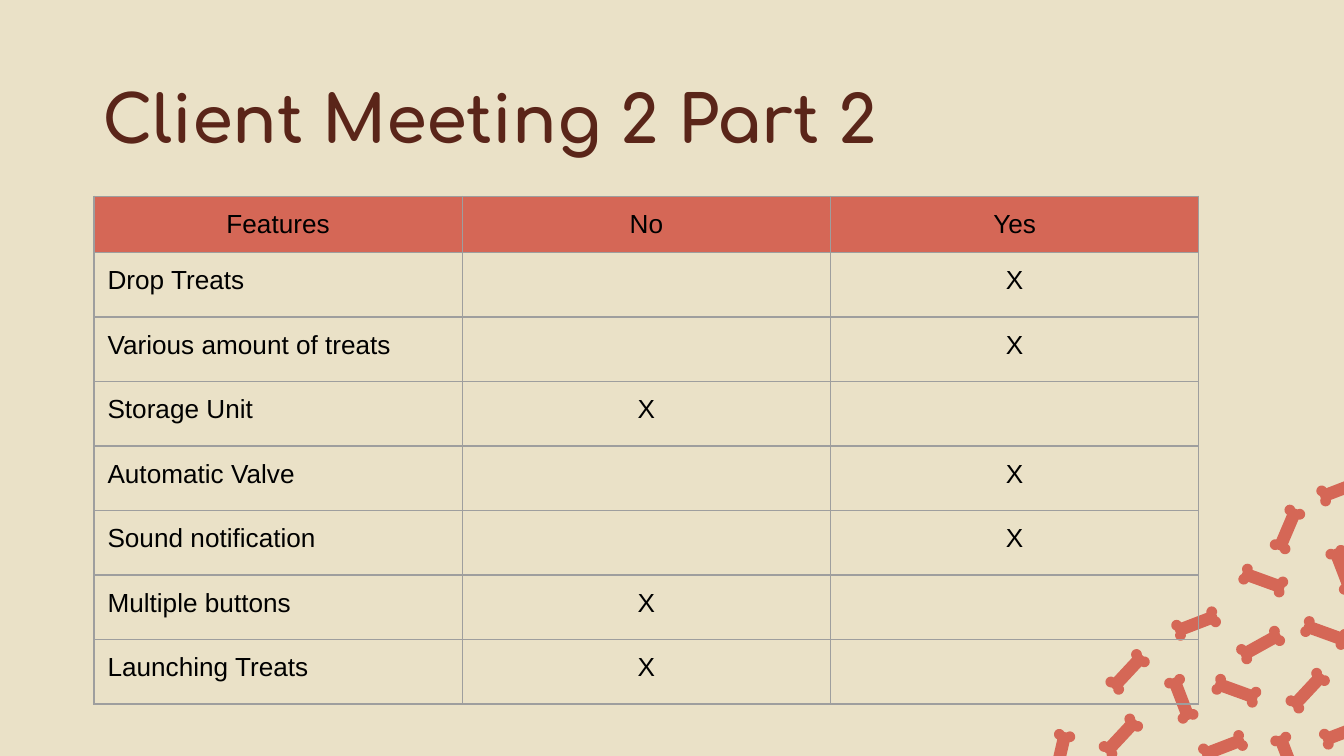
from dataclasses import dataclass
from math import cos, radians, sin

from lxml import etree
from pptx import Presentation
from pptx.dml.color import RGBColor
from pptx.enum.text import MSO_ANCHOR, MSO_AUTO_SIZE, PP_ALIGN
from pptx.oxml.ns import qn
from pptx.util import Inches, Pt

LEFT, CENTER = PP_ALIGN.LEFT, PP_ALIGN.CENTER
TOP = MSO_ANCHOR.TOP
NO_AUTOFIT = MSO_AUTO_SIZE.NONE
TITLE_ONLY = 5
SLIDE_WIDTH = 10
SLIDE_HEIGHT = SLIDE_WIDTH * 9 / 16


@dataclass(frozen=True)
class Theme:
    background: str = "EAE1C7"
    accent: str = "D56756"
    title: str = "5A2519"
    text: str = "000000"
    border: str = "9E9E9E"
    title_font: str = "Comfortaa"
    body_font: str = "Arial"
    title_size: int = 35
    body_size: int = 14
    border_width: float = 0.75


THEME = Theme()

# Each feature and whether the client wants it
FEATURES = [
    ("Drop Treats", True),
    ("Various amount of treats", True),
    ("Storage Unit", False),
    ("Automatic Valve", True),
    ("Sound notification", True),
    ("Multiple buttons", False),
    ("Launching Treats", False),
]

# Bones: centre x, centre y, clockwise angle in degrees
BONES = [
    (9.99, 4.24, 69), (9.98, 3.64, -21), (9.58, 3.94, -67), (9.4, 4.32, 20),
    (8.9, 4.64, -21), (10, 5.45, -21), (8.39, 5, -47), (9.73, 5.14, -47),
    (8.79, 5.2, 69), (9.58, 5.63, 69), (9.2, 5.14, 20), (9.86, 4.71, 20),
    (9.1, 5.56, -21), (9.38, 4.8, -29), (7.89, 5.61, -77), (8.34, 5.48, -47),
]
KNOB_X, KNOB_Y, KNOB_RADIUS = 0.14, 0.04, 0.04
BONE_LIMIT = 10.02


def style_text(font, name, size, color):
    font.name = name
    font.size = Pt(size)
    font.color.rgb = RGBColor.from_string(color)


def bone_outline():
    """Outline of a level bone around the origin, two knobs at each end."""
    arc = [radians(angle) for angle in range(170, -51, -20)]
    upper = [(KNOB_X + KNOB_RADIUS * cos(a), KNOB_Y + KNOB_RADIUS * sin(a))
             for a in arc]
    right = upper + [(x, -y) for x, y in reversed(upper)]
    return right + [(-x, -y) for x, y in right]


def cut_right(points, limit):
    """Cut a closed outline along the vertical line x = limit."""
    kept = []
    for (x1, y1), (x2, y2) in zip(points, points[1:] + points[:1]):
        if x1 <= limit:
            kept.append((x1, y1))
        if (x1 <= limit) != (x2 <= limit):
            kept.append((limit, y1 + (y2 - y1) * (limit - x1) / (x2 - x1)))
    return kept


def add_bone(shapes, center_x, center_y, angle):
    cosine, sine = cos(radians(angle)), sin(radians(angle))
    outline = [(center_x + x * cosine - y * sine,
                center_y + x * sine + y * cosine) for x, y in bone_outline()]
    points = [(Inches(x), Inches(y))
              for x, y in cut_right(outline, BONE_LIMIT)]
    builder = shapes.build_freeform(*points[0])
    builder.add_line_segments(points[1:], close=True)
    bone = builder.convert_to_shape()
    bone.shadow.inherit = False
    bone.fill.solid()
    bone.fill.fore_color.rgb = RGBColor.from_string(THEME.accent)
    bone.line.fill.background()


def set_title(slide, text):
    title = slide.shapes.title
    title.left, title.top = Inches(0.66), Inches(0.48)
    title.width, title.height = Inches(8.69), Inches(0.63)
    frame = title.text_frame
    frame.text = text
    frame.word_wrap = True
    frame.auto_size = NO_AUTOFIT
    frame.vertical_anchor = TOP
    frame.margin_left = frame.margin_right = Inches(0.1)
    frame.margin_top = frame.margin_bottom = Inches(0.1)
    paragraph = frame.paragraphs[0]
    paragraph.alignment = LEFT
    paragraph.font.bold = True
    style_text(paragraph.font, THEME.title_font, THEME.title_size, THEME.title)


def add_borders(cell):
    properties = cell._tc.get_or_add_tcPr()
    for index, side in enumerate(("lnL", "lnR", "lnT", "lnB")):
        line = etree.Element(qn(f"a:{side}"), w=str(Pt(THEME.border_width)))
        fill = etree.SubElement(line, qn("a:solidFill"))
        etree.SubElement(fill, qn("a:srgbClr"), val=THEME.border)
        properties.insert(index, line)


def fill_cell(cell, text, alignment, is_header):
    cell.text = text
    cell.vertical_anchor = TOP
    cell.margin_left = cell.margin_right = Inches(0.1)
    cell.margin_top = cell.margin_bottom = Inches(0.1)
    paragraph = cell.text_frame.paragraphs[0]
    paragraph.alignment = alignment
    paragraph.font.bold = False
    style_text(paragraph.font, THEME.body_font, THEME.body_size, THEME.text)
    if is_header:
        cell.fill.solid()
        cell.fill.fore_color.rgb = RGBColor.from_string(THEME.accent)
    else:
        cell.fill.background()
    add_borders(cell)


def add_feature_table(slide):
    rows = [("Features", "No", "Yes")]
    rows += [(name, "" if wanted else "X", "X" if wanted else "")
             for name, wanted in FEATURES]
    column_width, header_height, row_height = 2.74, 0.42, 0.48
    table = slide.shapes.add_table(
        len(rows), 3, Inches(0.7), Inches(1.46), Inches(3 * column_width),
        Inches(header_height + len(FEATURES) * row_height)).table
    table.horz_banding = False
    for column in table.columns:
        column.width = Inches(column_width)
    for row_index, texts in enumerate(rows):
        is_header = row_index == 0
        table.rows[row_index].height = Inches(
            header_height if is_header else row_height)
        for column_index, text in enumerate(texts):
            alignment = CENTER if is_header or column_index else LEFT
            fill_cell(table.cell(row_index, column_index), text, alignment,
                      is_header)


def main():
    presentation = Presentation()
    presentation.slide_width = Inches(SLIDE_WIDTH)
    presentation.slide_height = Inches(SLIDE_HEIGHT)
    slide = presentation.slides.add_slide(
        presentation.slide_layouts[TITLE_ONLY])
    slide.background.fill.solid()
    slide.background.fill.fore_color.rgb = RGBColor.from_string(
        THEME.background)

    # Scattered bones in the corner
    bones = slide.shapes.add_group_shape()
    for bone in BONES:
        add_bone(bones.shapes, *bone)

    # Title and feature table
    set_title(slide, "Client Meeting 2 Part 2")
    add_feature_table(slide)
    presentation.save("out.pptx")


if __name__ == "__main__":
    main()
